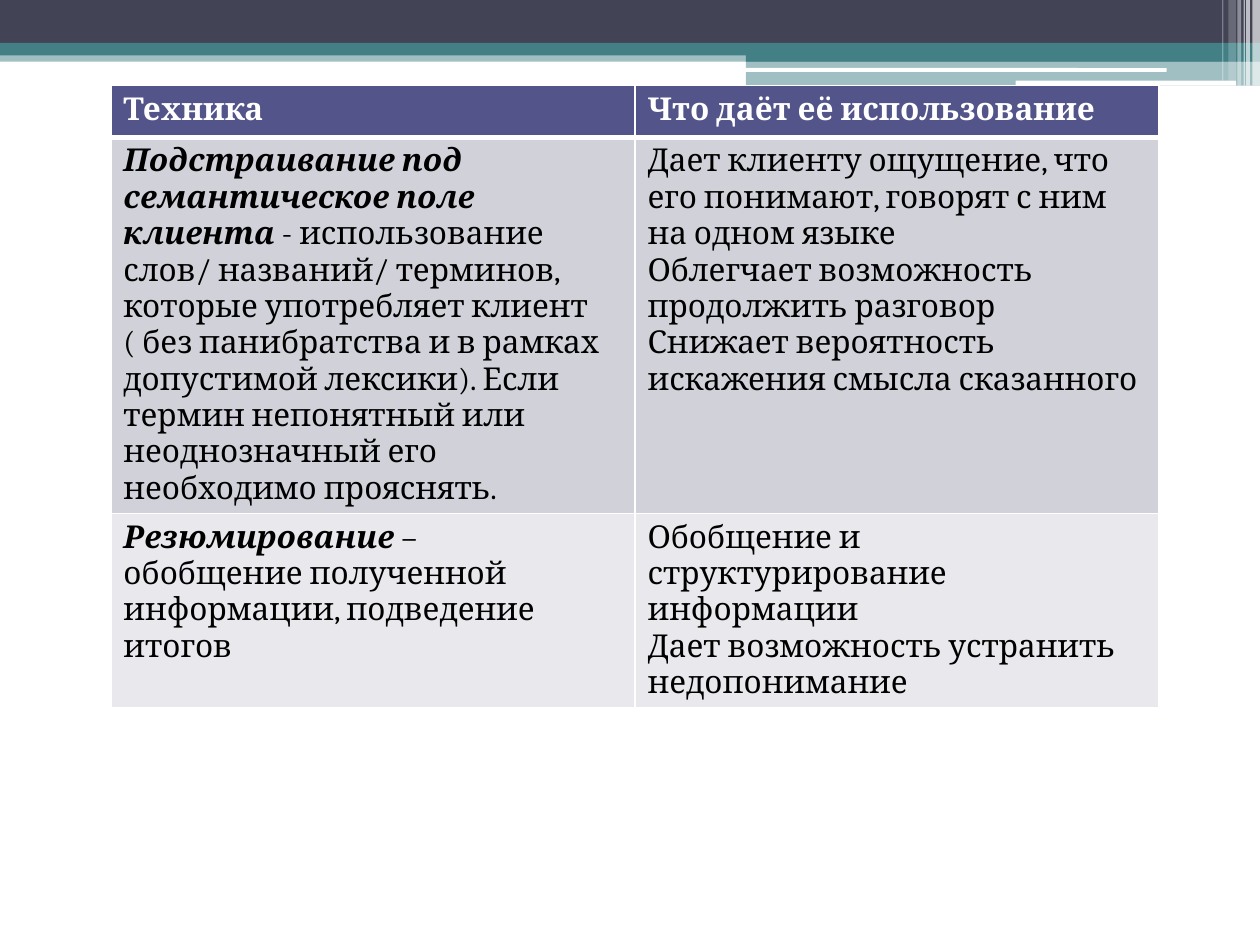
from lxml.etree import SubElement
from pptx import Presentation
from pptx.dml.color import RGBColor
from pptx.enum.shapes import MSO_SHAPE
from pptx.oxml.ns import qn
from pptx.util import Inches, Pt

NAVY, TEAL, WHITE, BLACK = "424456", "438086", "FFFFFF", "000000"
HEADER_FILL, BODY_FILLS = "53548A", ("D1D1DA", "E9E9ED")
BASE_FONT = {"name": "Cambria", "size": Pt(18), "bold": False, "italic": False}
PLAIN = {}
HEADING = {"bold": True}
TERM = {"bold": True, "italic": True}

BANDS = [
    (0, 0.4, 10, 0.09, TEAL, 50),
    (0, 0, 10, 0.34, NAVY, 100),
    (0, 0.34, 10, 0.1, TEAL, 100),
    (5.92, 0.39, 4.08, 0.1, TEAL, 100),
    (5.92, 0.48, 4.08, 0.2, TEAL, 50),
]
GROOVES = [(5.91, 0.54, 3.35, 0.03), (8.06, 0.64, 1.75, 0.04)]
STRIPES = [
    (9.94, 0.06, 0.68, 65),
    (9.89, 0.03, 0.68, 65),
    (9.87, 0.01, 0.68, 60),
    (9.82, 0.03, 0.68, 40),
    (9.75, 0.06, 0.64, 20),
    (9.7, 0.01, 0.64, 30),
]

TECHNIQUES = [
    [
        [[("Техника", HEADING)]],
        [[("Что даёт её использование", HEADING)]],
    ],
    [
        [[
            ("Подстраивание под семантическое поле клиента", TERM),
            (" - использование слов/ названий/ терминов, которые употребляет "
             "клиент ( без панибратства и в рамках допустимой лексики). Если "
             "термин непонятный или неоднозначный его необходимо прояснять.", PLAIN),
        ]],
        [
            [("Дает клиенту ощущение, что его понимают, говорят с ним на одном языке", PLAIN)],
            [("Облегчает возможность продолжить разговор", PLAIN)],
            [("Снижает вероятность искажения смысла сказанного", PLAIN)],
        ],
    ],
    [
        [
            [("Резюмирование ", TERM), ("–", PLAIN)],
            [("обобщение полученной информации, подведение итогов", PLAIN)],
        ],
        [
            [("Обобщение и структурирование информации", PLAIN)],
            [("Дает возможность устранить недопонимание", PLAIN)],
        ],
    ],
]


def paint(fill, color):
    """Fill with a solid colour given as a hex string."""
    fill.solid()
    fill.fore_color.rgb = RGBColor.from_string(color)


def add_bar(slide, box, color, opacity=100, preset=MSO_SHAPE.RECTANGLE):
    """Add a flat bar without outline at the given box."""
    bar = slide.shapes.add_shape(preset, *box)
    bar.shadow.inherit = False
    bar.line.fill.background()
    paint(bar.fill, color)
    if opacity < 100:
        tint = bar.fill._xPr.find(qn("a:solidFill"))[0]
        SubElement(tint, qn("a:alpha"), val=str(opacity * 1000))
    return bar


def add_banner(slide, left, top):
    """Draw the layered bands, white grooves and corner stripes."""
    def place(x, y, width, height):
        return left + Inches(x), top + Inches(y), Inches(width), Inches(height)

    for *box, color, opacity in BANDS:
        add_bar(slide, place(*box), color, opacity)
    for box in GROOVES:
        add_bar(slide, place(*box), WHITE, preset=MSO_SHAPE.ROUNDED_RECTANGLE)
    for x, width, height, opacity in STRIPES:
        add_bar(slide, place(x, 0, width, height), WHITE, opacity)


def add_borders(cell, widths):
    """Give the cell white borders with widths in points by side."""
    properties = cell._tc.get_or_add_tcPr()
    for side, width in widths.items():
        border = SubElement(properties, qn(f"a:ln{side}"), w=str(Pt(width)))
        SubElement(SubElement(border, qn("a:solidFill")), qn("a:srgbClr"), val=WHITE)


def write_cell(cell, paragraphs, color):
    """Write paragraphs of formatted runs into the cell."""
    for index, runs in enumerate(paragraphs):
        frame = cell.text_frame
        paragraph = frame.add_paragraph() if index else frame.paragraphs[0]
        for text, style in runs:
            run = paragraph.add_run()
            run.text = text
            for attribute, value in {**BASE_FONT, **style}.items():
                setattr(run.font, attribute, value)
            run.font.color.rgb = RGBColor.from_string(color)


def add_technique_table(slide, left, top, width, height):
    """Build the table of techniques and their benefits in the given box."""
    row_count, column_count = len(TECHNIQUES), len(TECHNIQUES[0])
    frame = slide.shapes.add_table(row_count, column_count, left, top, width, height)
    for row in frame.table.rows:
        row.height = Inches(0.41)
    frame.height = height
    for row_index, technique in enumerate(TECHNIQUES):
        is_header = row_index == 0
        fill = HEADER_FILL if is_header else BODY_FILLS[(row_index - 1) % 2]
        borders = {"L": 1, "R": 1, "T": 3 if row_index == 1 else 1, "B": 3 if is_header else 1}
        for column_index, paragraphs in enumerate(technique):
            cell = frame.table.cell(row_index, column_index)
            add_borders(cell, borders)
            paint(cell.fill, fill)
            write_cell(cell, paragraphs, WHITE if is_header else BLACK)


def main():
    """Build and save the slide."""
    deck = Presentation()
    deck.slide_width, deck.slide_height = Inches(10), Inches(7.5)
    slide = deck.slides.add_slide(deck.slide_layouts[6])
    add_banner(slide, Inches(0), Inches(0))
    add_technique_table(slide, Inches(0.88), Inches(0.68), Inches(8.32), Inches(4.81))
    deck.save("out.pptx")


if __name__ == "__main__":
    main()
